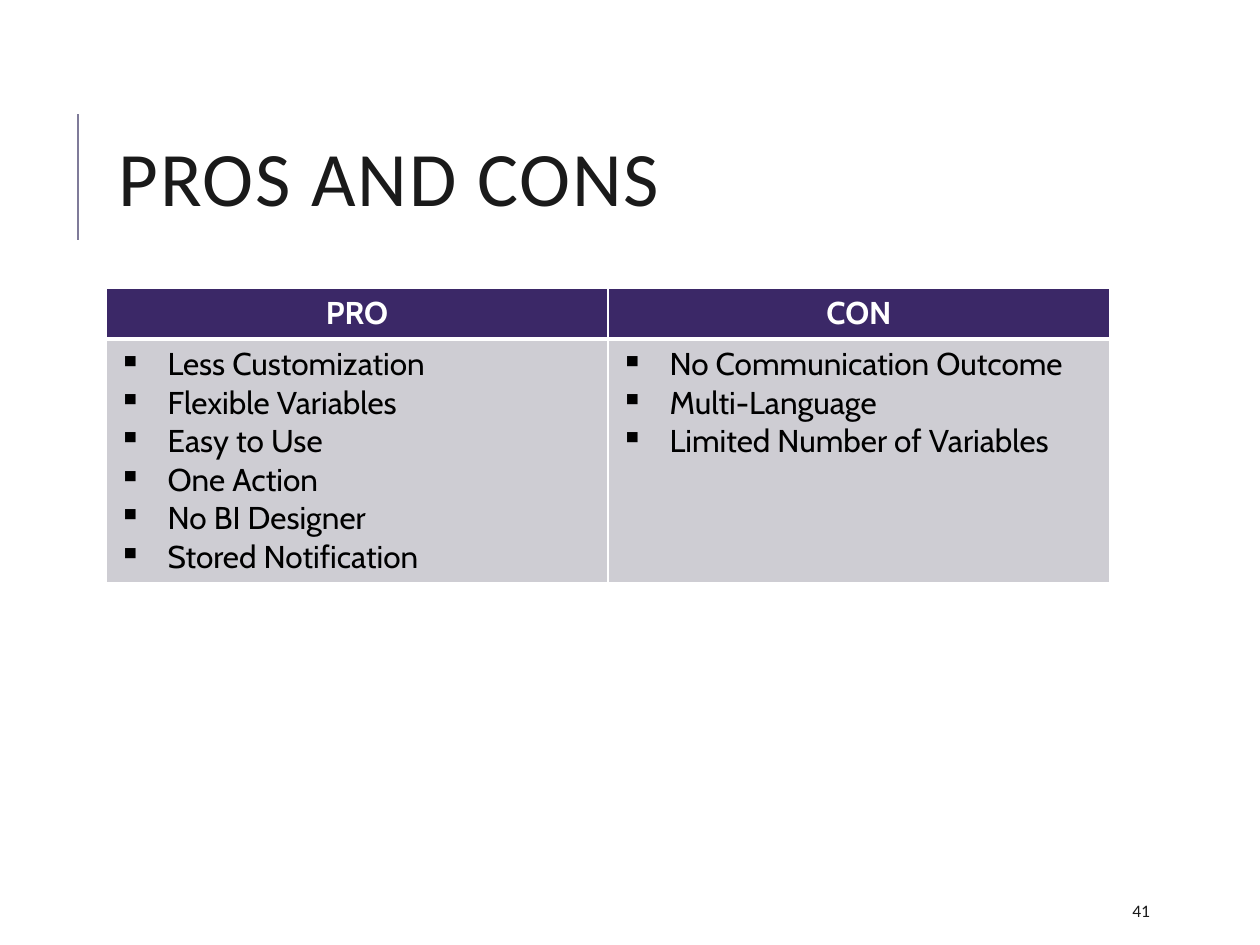
from pptx import Presentation
from pptx.dml.color import RGBColor as RGB
from pptx.enum.shapes import MSO_CONNECTOR as Conn
from pptx.enum.text import MSO_ANCHOR as Anchor, MSO_AUTO_SIZE as Fit, PP_ALIGN as Align
from pptx.oxml.ns import qn
from pptx.util import Pt
from lxml.etree import SubElement as Sub, Element

INK = RGB(0x1A, 0x1A, 0x1A)
BLACK = RGB(0, 0, 0)
WHITE = RGB(0xFF, 0xFF, 0xFF)
PURPLE = RGB(0x3B, 0x28, 0x67)
GREY = RGB(0xCE, 0xCD, 0xD3)
MAUVE = RGB(0x7F, 0x7B, 0x99)
SCALE = 914400 / 126

TITLE = dict(name="Calibri", size=Pt(44))
NUMBER = dict(name="Calibri", size=Pt(10))
HEAD = dict(name="Cabin", size=Pt(18), bold=True)
BODY = dict(name="Cabin", size=Pt(18), bold=False)

TABLE = {
    "PRO": ["Less Customization", "Flexible Variables", "Easy to Use",
            "One Action", "No BI Designer", "Stored Notification"],
    "CON": ["No Communication Outcome", "Multi-Language",
            "Limited Number of Variables"],
}


def px(n):
    return round(n * SCALE)


class Deck:
    def __init__(self, wide, high):
        self.prs = Presentation()
        self.prs.slide_width, self.prs.slide_height = px(wide), px(high)
        self.slide = self.prs.slides.add_slide(self.prs.slide_layouts[5])
        self.shapes = self.slide.shapes

    def label(self, para, text, form, color):
        run = para.add_run()
        run.text = text
        for key, val in form.items():
            setattr(run.font, key, val)
        run.font.color.rgb = color
        return run

    def title(self, text, *box):
        shape = self.shapes.title
        shape.left, shape.top, shape.width, shape.height = map(px, box)
        frame = shape.text_frame
        frame.auto_size, frame.vertical_anchor = Fit.NONE, Anchor.MIDDLE
        para = frame.paragraphs[0]
        para.alignment, para.line_spacing = Align.LEFT, 0.8
        run = self.label(para, text, TITLE, INK)
        run.font._element.set("spc", "100")

    def line(self, color, width, *ends):
        rule = self.shapes.add_connector(Conn.STRAIGHT, *map(px, ends))
        rule.line.color.rgb, rule.line.width = color, Pt(width)
        Sub(rule._element.spPr, qn("a:effectLst"))

    def text(self, text, form, *box):
        frame = self.shapes.add_textbox(*map(px, box)).text_frame
        frame.word_wrap, frame.vertical_anchor = True, Anchor.MIDDLE
        self.label(frame.paragraphs[0], text, form, INK)

    def border(self, cell, widths):
        props = cell._tc.get_or_add_tcPr()
        for i, (side, width) in enumerate(widths.items()):
            edge = Element(qn("a:ln" + side), w=str(int(Pt(width))))
            fill = Sub(edge, qn("a:solidFill"))
            Sub(fill, qn("a:srgbClr"), val=str(WHITE))
            props.insert(i, edge)

    def bullet(self, para):
        props = para._p.get_or_add_pPr()
        props.set("marL", str(px(49)))
        props.set("indent", str(px(-49)))
        Sub(props, qn("a:buChar"), char="▪")

    def cell(self, cell, lines, form, color, fill, edges):
        cell.fill.solid()
        cell.fill.fore_color.rgb = fill
        self.border(cell, edges)
        frame = cell.text_frame
        for i, text in enumerate(lines):
            para = frame.add_paragraph() if i else frame.paragraphs[0]
            if form is HEAD:
                para.alignment = Align.CENTER
            else:
                self.bullet(para)
            self.label(para, text, form, color)

    def table(self, data, heights, *box):
        grid = self.shapes.add_table(2, len(data), *map(px, box)).table
        for row, high in zip(grid.rows, heights):
            row.height = px(high)
        for col, (head, items) in enumerate(data.items()):
            self.cell(grid.cell(0, col), [head], HEAD, WHITE, PURPLE,
                      dict(L=1, R=1, T=1, B=3))
            self.cell(grid.cell(1, col), items, BODY, BLACK, GREY,
                      dict(L=1, R=1, T=3, B=1))


def main():
    deck = Deck(1260, 945)

    # Title with its side rule
    deck.line(MAUVE, 1.5, 78, 240, 78, 114)
    deck.title("PROS AND CONS", 106, 81, 1004, 207)

    # Comparison table
    deck.table(TABLE, (51, 242), 106, 288, 1004, 293)

    # Slide number
    deck.text("41", NUMBER, 1120, 892, 101, 38)

    deck.prs.save("out.pptx")


if __name__ == "__main__":
    main()
